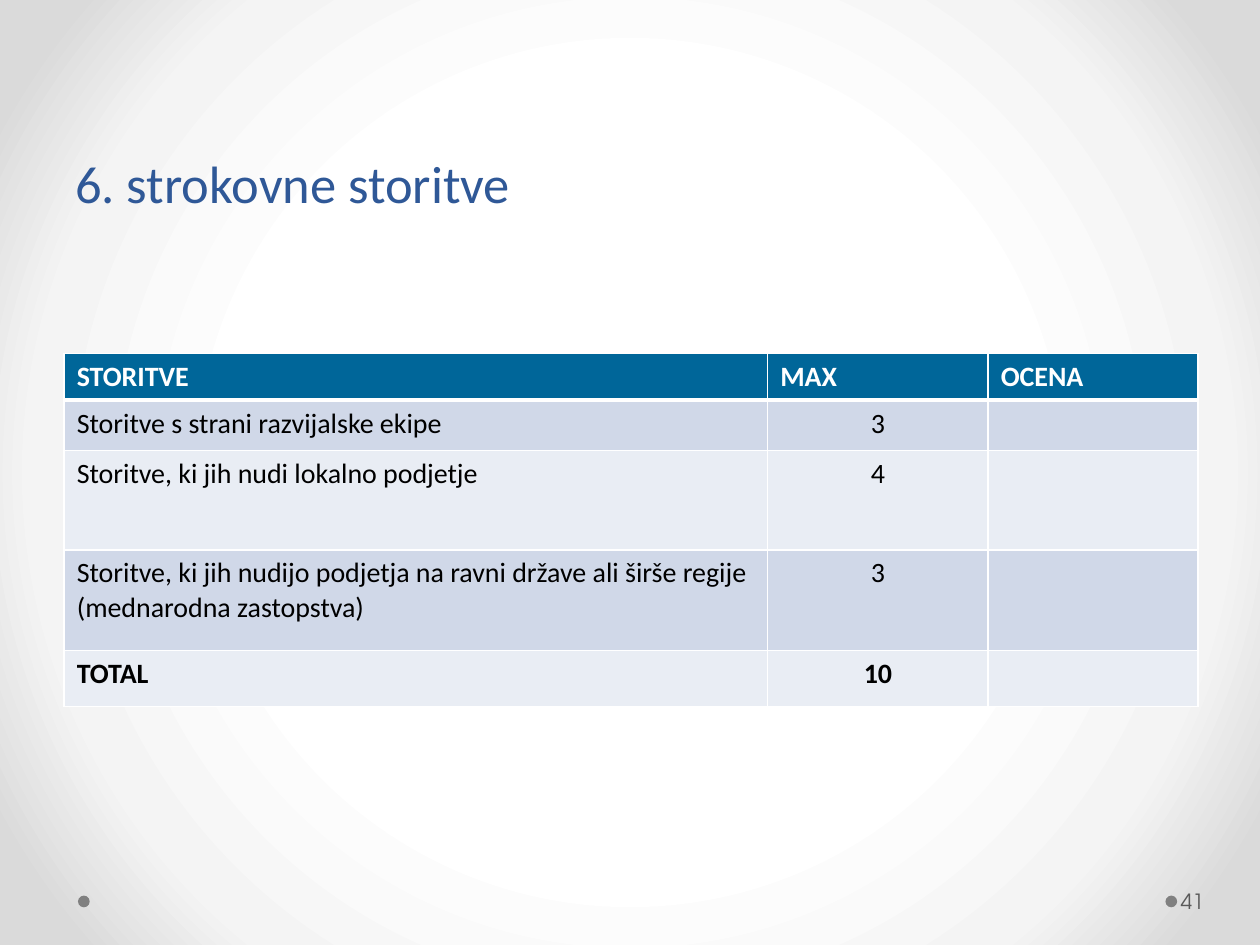
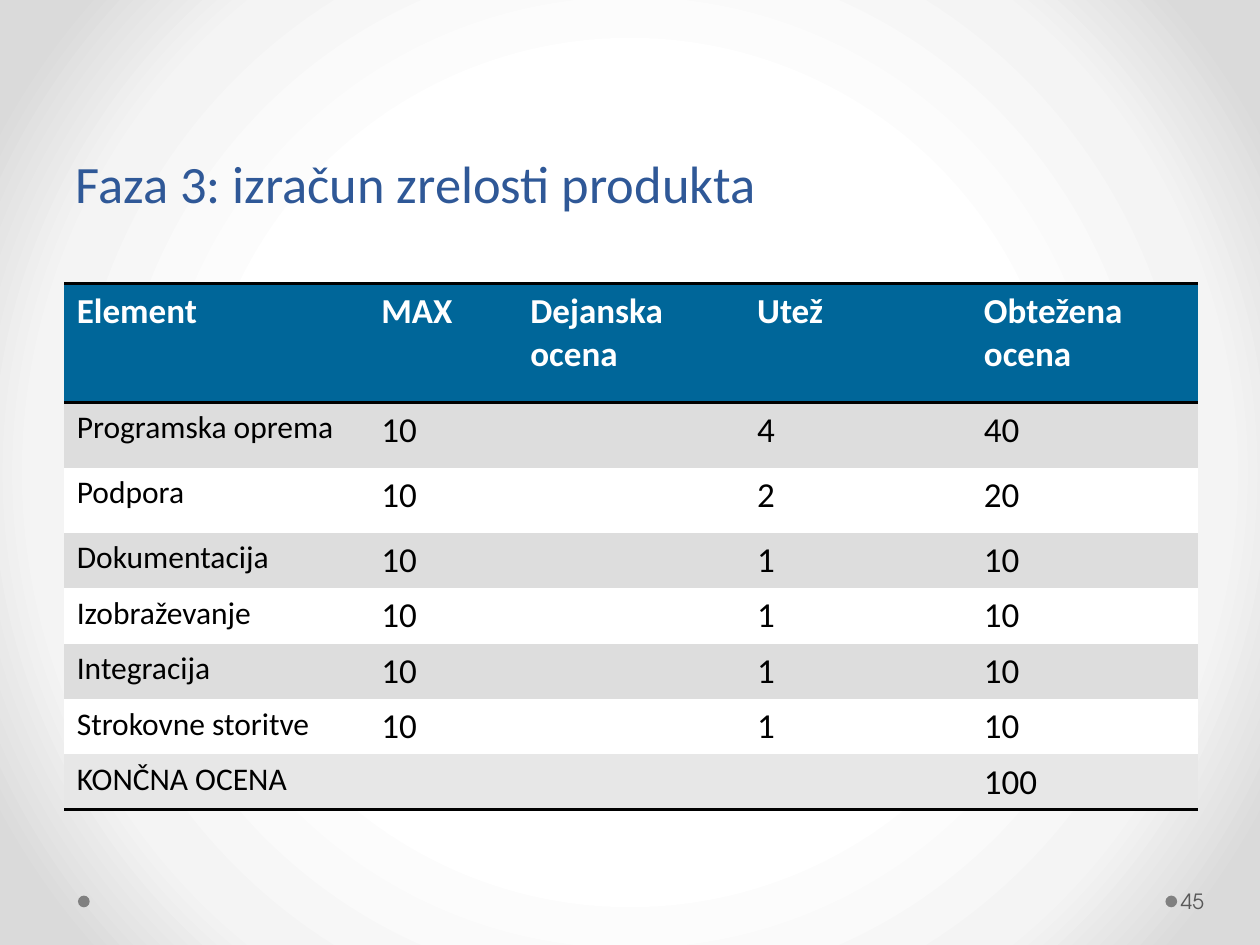
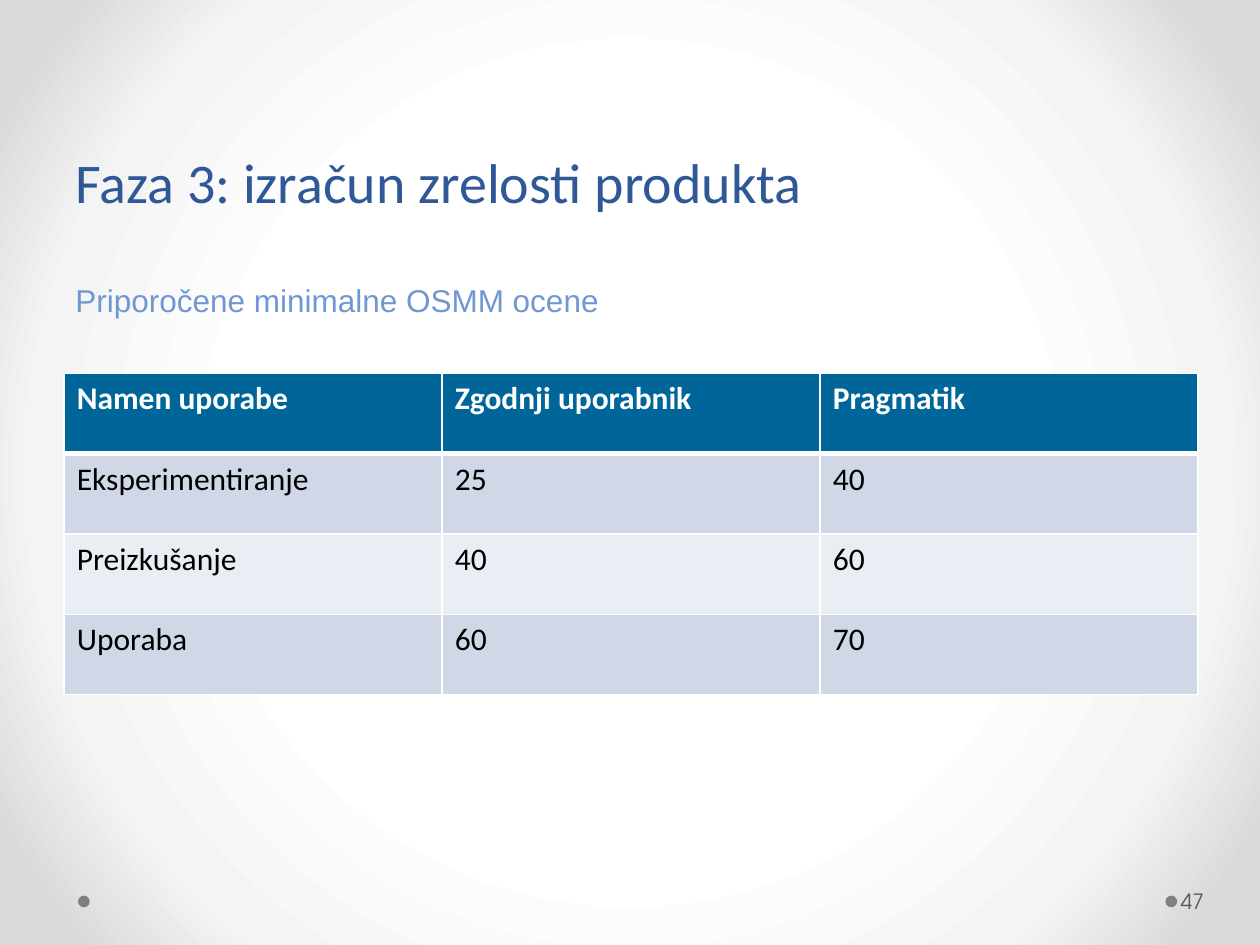
"""Builds three slides on scoring the maturity of a software product."""
from lxml.etree import SubElement
from pptx import Presentation
from pptx.dml.color import RGBColor
from pptx.enum.shapes import MSO_SHAPE as Shape
from pptx.enum.text import MSO_ANCHOR as Anchor, PP_ALIGN as Align
from pptx.oxml.ns import qn
from pptx.util import Pt

HEADING, SUBHEADING = "2F5897", "7097D3"
HEADER, WHITE, BLACK = "006699", "FFFFFF", "000000"
DOT, NUMBER = "808080", "595959"
BLUE_BANDS = ("D0D8E8", "E9EDF4")
GREY_BANDS = ("DDDDDD", "FFFFFF")
TOTAL_BAND = "E7E7E7"
BACKDROP = ((50, "FFFFFF"), (76, "F4F4F4"), (92, "DADADA"))
MARGIN, CONTENT_WIDTH = 36, 648
TABLE_LEFT = 36.7


def color(hex_code):
    """Turn a hex string into a colour."""
    return RGBColor.from_string(hex_code)


def write(frame, text, size=18, font="Calibri", ink=BLACK, bold=False,
          align=Align.LEFT, spacing=None):
    """Put formatted text into a text frame."""
    paragraph = frame.paragraphs[0]
    paragraph.alignment = align
    if spacing:
        paragraph.line_spacing = Pt(spacing)
    run = paragraph.add_run()
    run.text = text
    run.font.size, run.font.name, run.font.bold = Pt(size), font, bold
    run.font.color.rgb = color(ink)


def add_label(slide, text, left, top, width, height, anchor=Anchor.TOP,
              wrap=True, inset=7.2, **style):
    """Add a text box."""
    frame = slide.shapes.add_textbox(Pt(left), Pt(top), Pt(width), Pt(height)).text_frame
    frame.word_wrap, frame.vertical_anchor = wrap, anchor
    frame.margin_left = Pt(inset)
    write(frame, text, **style)


def add_dot(slide, left):
    """Add a footer dot."""
    dot = slide.shapes.add_shape(Shape.OVAL, Pt(left), Pt(511.8), Pt(6.7), Pt(6.7))
    dot.shadow.inherit = False
    dot.fill.solid()
    dot.fill.fore_color.rgb = color(DOT)
    dot.line.fill.background()


def paint_backdrop(master):
    """Give the master a radial gradient."""
    master.background.fill.gradient()
    gradient = master.element.find(".//" + qn("a:gradFill"))
    gradient.clear()
    stops = SubElement(gradient, qn("a:gsLst"))
    for position, shade in BACKDROP:
        stop = SubElement(stops, qn("a:gs"), pos=str(position * 1000))
        SubElement(stop, qn("a:srgbClr"), val=shade)
    circle = SubElement(gradient, qn("a:path"), path="circle")
    SubElement(circle, qn("a:fillToRect"), l="50000", t="50000", r="50000", b="50000")


def add_page(deck, title, number, title_size=30):
    """Add a slide with its title and footer."""
    slide = deck.slides.add_slide(deck.slide_layouts[6])
    for left in (666, 44.6):
        add_dot(slide, left)
    add_label(slide, title, MARGIN, 0, CONTENT_WIDTH, 126, anchor=Anchor.BOTTOM,
              size=title_size, ink=HEADING, spacing=58)
    add_label(slide, number, 672.5, 500.4, 43.9, 28.8, anchor=Anchor.MIDDLE,
              inset=2.2, size=12, font="TeX Gyre Adventor", ink=NUMBER)
    return slide


def set_borders(cell, edges):
    """Draw the given edges of a cell and hide the others."""
    properties = cell._tc.get_or_add_tcPr()
    for side in "LRTB":
        shade, width = edges.get(side, (None, 0))
        line = SubElement(properties, qn("a:ln" + side), w=str(Pt(width)))
        if shade:
            SubElement(SubElement(line, qn("a:solidFill")), qn("a:srgbClr"), val=shade)
        else:
            SubElement(line, qn("a:noFill"))


def grid_edges(row, last):
    """Give white edges all round, heavier under the header."""
    edges = {side: (WHITE, 1) for side in "LRTB"}
    if row < 2:
        edges["B" if row == 0 else "T"] = (WHITE, 3)
    return edges


def rule_edges(row, last):
    """Give black rules round the header and under the last row."""
    edges = {}
    if row < 2:
        edges["T"] = (BLACK, 2)
    if row in (0, last):
        edges["B"] = (BLACK, 2)
    return edges


def add_score_table(slide, top, widths, heights, rows, edges, bands, cell_style):
    """Add a table with a header row and banded body."""
    table = slide.shapes.add_table(len(rows), len(widths), Pt(TABLE_LEFT), Pt(top),
                                   Pt(sum(widths)), Pt(sum(heights))).table
    table.first_row = table.horz_banding = False
    for column, width in zip(table.columns, widths):
        column.width = Pt(width)
    fills = [HEADER] + [bands[i % len(bands)] for i in range(len(rows) - 1)]
    for r, (values, height, fill) in enumerate(zip(rows, heights, fills)):
        table.rows[r].height = Pt(height)
        for c, value in enumerate(values):
            cell = table.cell(r, c)
            set_borders(cell, edges(r, len(rows) - 1))
            cell.fill.solid()
            cell.fill.fore_color.rgb = color(fill)
            if value:
                ink = BLACK if r else WHITE
                write(cell.text_frame, value, ink=ink, **cell_style(r, c))


def service_style(row, column):
    """Centre the scores and stress the header and total."""
    centred = row > 0 and column == 1
    return {"size": 16, "bold": row in (0, 4),
            "align": Align.CENTER if centred else Align.LEFT}


def element_style(row, column):
    """Make the element names smaller than the rest."""
    return {"size": 18 if row and column == 0 else 20, "bold": row == 0}


def purpose_style(row, column):
    """Stress the header."""
    return {"size": 18, "bold": row == 0}


def add_services(deck):
    """Build the slide on professional services."""
    slide = add_page(deck, "6. strokovne storitve", "41")
    rows = [
        ("STORITVE", "MAX", "OCENA"),
        ("Storitve s strani razvijalske ekipe", "3", ""),
        ("Storitve, ki jih nudi lokalno podjetje", "4", ""),
        ("Storitve, ki jih nudijo podjetja na ravni države ali širše regije "
         "(mednarodna zastopstva)", "3", ""),
        ("TOTAL", "10", ""),
    ]
    add_score_table(slide, 202, (402, 126, 120), (26.7, 28.8, 56.7, 57.6, 32), rows,
                    grid_edges, BLUE_BANDS, service_style)


def add_maturity(deck):
    """Build the slide on the weighted score."""
    slide = add_page(deck, "Faza 3: izračun zrelosti produkta", "45")
    weights = {"Programska oprema": 4, "Podpora": 2, "Dokumentacija": 1,
               "Izobraževanje": 1, "Integracija": 1, "Strokovne storitve": 1}
    rows = [("Element", "MAX", "Dejanska ocena", "Utež", "Obtežena ocena")]
    rows += [(name, "10", "", str(weight), str(10 * weight))
             for name, weight in weights.items()]
    rows.append(("KONČNA OCENA", "", "", "", str(10 * sum(weights.values()))))
    bands = GREY_BANDS * 3 + (TOTAL_BAND,)
    add_score_table(slide, 162, (174, 85.2, 129.6, 129.6, 129.6),
                    [68] + [37.2] * 2 + [31.7] * 5, rows,
                    rule_edges, bands, element_style)


def add_minimums(deck):
    """Build the slide on recommended minimum scores."""
    slide = add_page(deck, "Faza 3: izračun zrelosti produkta", "47", title_size=32)
    rows = [
        ("Namen uporabe", "Zgodnji uporabnik", "Pragmatik"),
        ("Eksperimentiranje", "25", "40"),
        ("Preizkušanje", "40", "60"),
        ("Uporaba", "60", "70"),
    ]
    add_score_table(slide, 213.4, [216] * 3, [45.9] * 4, rows,
                    grid_edges, BLUE_BANDS, purpose_style)
    add_label(slide, "Priporočene minimalne OSMM ocene", MARGIN, 157, 316.8, 28.8,
              wrap=False, font="Arial", ink=SUBHEADING)


def main():
    """Build and save the deck."""
    deck = Presentation()
    deck.slide_width, deck.slide_height = Pt(720), Pt(540)
    paint_backdrop(deck.slide_master)
    add_services(deck)
    add_maturity(deck)
    add_minimums(deck)
    deck.save("out.pptx")


if __name__ == "__main__":
    main()
